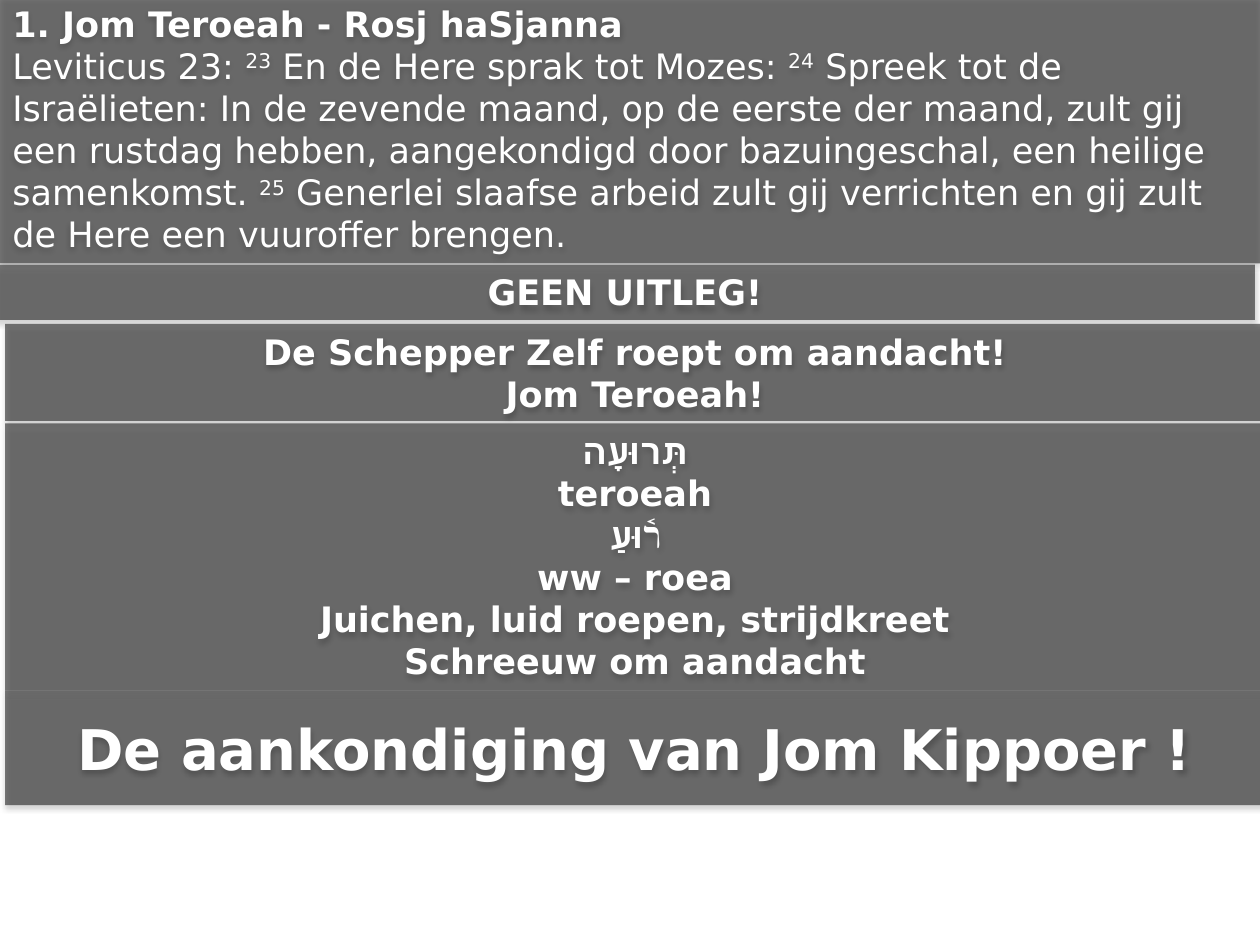
from lxml import etree
from pptx import Presentation
from pptx.dml import color
from pptx.enum import shapes, text
from pptx.oxml import ns
from pptx.util import Inches, Pt

COLORS = {"panel": "000000", "text": "FFFFFF", "shadow": "000000"}
LATIN, HEBREW = "DejaVu Sans", "Calibri"


def add_child(parent, tag, **attributes):
    return etree.SubElement(parent, ns.qn(tag), attributes)


def style_panel(shape):
    """Half-transparent fill, no outline and a soft shadow below."""
    shape.fill.solid()
    shape.fill.fore_color.rgb = color.RGBColor.from_string(COLORS["panel"])
    fill_color = shape.fill._xPr.find(ns.qn("a:solidFill"))[0]
    add_child(fill_color, "a:alpha", val="50000")
    shape.line.fill.background()

    shape.shadow.inherit = False
    effects = shape._element.spPr.find(ns.qn("a:effectLst"))
    shadow = add_child(effects, "a:outerShdw", blurRad=str(Pt(3.1)),
                       dist=str(Pt(1.8)), dir="5400000", rotWithShape="0")
    shadow_color = add_child(shadow, "a:srgbClr", val=COLORS["shadow"])
    add_child(shadow_color, "a:alpha", val="35000")


def add_run(paragraph, words, size, bold=True, font=LATIN, superscript=False):
    run = paragraph.add_run()
    run.text = words
    run.font.name = font
    run.font.size = Pt(size)
    run.font.bold = bold
    run.font.color.rgb = color.RGBColor.from_string(COLORS["text"])
    if superscript:
        run._r.get_or_add_rPr().set("baseline", "30000")


def add_panel(slide, box, anchor=text.MSO_ANCHOR.TOP):
    shape = slide.shapes.add_shape(shapes.MSO_SHAPE.RECTANGLE,
                                   *(Inches(length) for length in box))
    style_panel(shape)
    frame = shape.text_frame
    frame.word_wrap = True
    frame.auto_size = text.MSO_AUTO_SIZE.SHAPE_TO_FIT_TEXT
    frame.vertical_anchor = anchor
    return frame


def add_scripture(slide, box, heading, passage):
    """Bold heading over a passage with raised verse numbers."""
    frame = add_panel(slide, box)
    title, body = frame.paragraphs[0], frame.add_paragraph()
    add_run(title, heading, 20)
    for words in passage:
        add_run(body, words, 20, bold=False, superscript=words.isdigit())
    for paragraph in (title, body):
        paragraph.alignment = text.PP_ALIGN.LEFT


def add_statement(slide, box, lines, size=20, anchor=text.MSO_ANCHOR.TOP):
    """Centred bold lines, each given as (words, font)."""
    frame = add_panel(slide, box, anchor)
    for index, (words, font) in enumerate(lines):
        paragraph = frame.add_paragraph() if index else frame.paragraphs[0]
        paragraph.alignment = text.PP_ALIGN.CENTER
        add_run(paragraph, words, size, font=font)


def main():
    presentation = Presentation()
    presentation.slide_width, presentation.slide_height = Inches(10), Inches(7.5)
    slide = presentation.slides.add_slide(presentation.slide_layouts[6])

    # Bible passage
    add_scripture(slide, (0, -0.03, 10, 2.12), "1. Jom Teroeah - Rosj haSjanna", [
        "Leviticus 23: ", "23", " En de Here sprak tot Mozes: ", "24",
        " Spreek tot de Israëlieten: In de zevende maand, op de eerste der maand, "
        "zult gij een rustdag hebben, aangekondigd door bazuingeschal, "
        "een heilige samenkomst. ", "25",
        " Generlei slaafse arbeid zult gij verrichten en gij zult "
        "de Here een vuuroffer brengen.",
    ])

    # Call for attention
    add_statement(slide, (0.04, 2.57, 10, 0.77), [
        ("De Schepper Zelf roept om aandacht!", LATIN),
        ("Jom Teroeah!", LATIN),
    ])

    # Hebrew word study
    add_statement(slide, (0.04, 3.36, 10, 2.12), [
        ("תְּרוּעָה", HEBREW),
        ("teroeah", LATIN),
        ("ר֫וּעַ", HEBREW),
        ("ww – roea", LATIN),
        ("Juichen, luid roepen, strijdkreet", LATIN),
        ("Schreeuw om aandacht", LATIN),
    ])

    # Conclusion
    add_statement(slide, (0.04, 5.48, 10, 0.91),
                  [("De aankondiging van Jom Kippoer !", LATIN)],
                  size=32, anchor=text.MSO_ANCHOR.MIDDLE)

    # Remark under the passage
    add_statement(slide, (-0.04, 2.1, 10, 0.44), [("GEEN UITLEG!", LATIN)])

    presentation.save("out.pptx")


if __name__ == "__main__":
    main()
